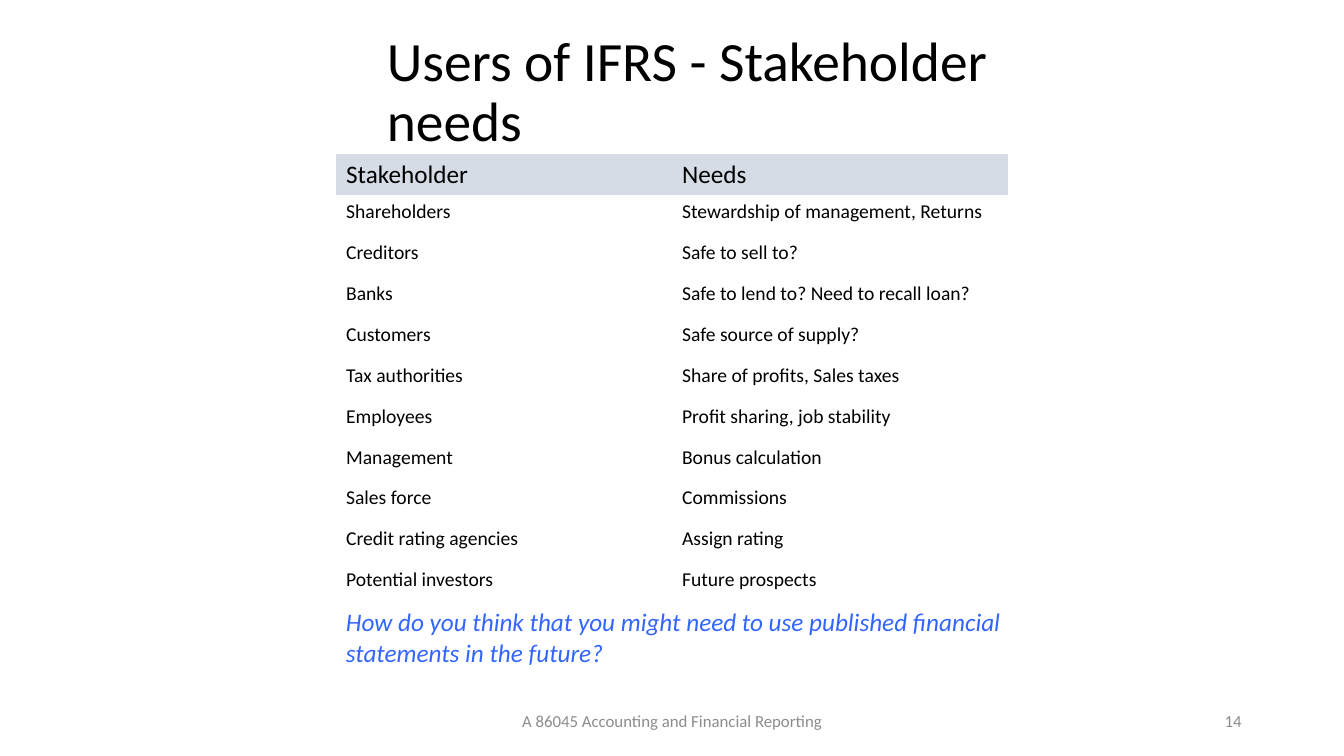
"""Build the slide on IFRS users and their stakeholder needs."""
from pptx import Presentation
from pptx.dml.color import RGBColor
from pptx.enum.text import MSO_ANCHOR, PP_ALIGN
from pptx.util import Pt

BLACK = RGBColor(0x00, 0x00, 0x00)
GREY = RGBColor(0x8C, 0x8C, 0x8C)
BLUE = RGBColor(0x33, 0x66, 0xFF)
HEADER_FILL = RGBColor(0xD6, 0xDC, 0xE5)
NO_STYLE_NO_GRID = "{2D5ABB26-0587-4C30-8999-92F81FD0307C}"

STAKEHOLDER_NEEDS = [
    ("Stakeholder", "Needs"),
    ("Shareholders", "Stewardship of management, Returns"),
    ("Creditors", "Safe to sell to?"),
    ("Banks", "Safe to lend to? Need to recall loan?"),
    ("Customers", "Safe source of supply?"),
    ("Tax authorities", "Share of profits, Sales taxes"),
    ("Employees", "Profit sharing, job stability"),
    ("Management", "Bonus calculation"),
    ("Sales force", "Commissions"),
    ("Credit rating agencies", "Assign rating"),
    ("Potential investors", "Future prospects"),
]


class SlideBuilder:
    font = "Calibri"

    def __init__(self, slide):
        self.slide = slide

    def add_run(self, tf, text, size, color=BLACK, italic=False, **para):
        p = tf.paragraphs[0]
        for name, value in para.items():
            setattr(p, name, value)
        r = p.add_run()
        r.text = text
        for name, value in {"name": self.font, "size": Pt(size), "italic": italic}.items():
            setattr(r.font, name, value)
        r.font.color.rgb = color

    def text(self, box, text, size, anchor=MSO_ANCHOR.MIDDLE, **style):
        tf = self.slide.shapes.add_textbox(*map(Pt, box)).text_frame
        for name, value in {"word_wrap": True, "vertical_anchor": anchor}.items():
            setattr(tf, name, value)
        self.add_run(tf, text, size, **style)

    def table(self, left, top, width, row_height, rows):
        frame = self.slide.shapes.add_table(
            len(rows), len(rows[0]), Pt(left), Pt(top), Pt(width), Pt(row_height * len(rows)))
        tbl = frame.table
        for name in ("first_row", "horz_banding"):
            setattr(tbl, name, False)
        frame._element.graphic.graphicData.tbl.tblPr[0].text = NO_STYLE_NO_GRID
        for i, row in enumerate(rows):
            tbl.rows[i].height = Pt(row_height)
            for j, text in enumerate(row):
                cell = tbl.cell(i, j)
                if i == 0:
                    cell.fill.solid()
                    cell.fill.fore_color.rgb = HEADER_FILL
                else:
                    cell.fill.background()
                self.add_run(cell.text_frame, text, 14 if i else 18)


def main():
    prs = Presentation()
    prs.slide_width, prs.slide_height = Pt(960), Pt(540)
    s = SlideBuilder(prs.slides.add_slide(prs.slide_layouts[6]))
    s.text((269.3, 21.6, 535, 90), "Users of IFRS - Stakeholder needs", 39.6, line_spacing=0.9)
    s.text((318.2, 500.4, 324, 28.8), "A 86045 Accounting and Financial Reporting", 12,
           color=GREY, alignment=PP_ALIGN.CENTER)
    s.table(240, 110.2, 480, 29.2, STAKEHOLDER_NEEDS)
    s.text((240, 429.8, 543, 51),
           "How do you think that you might need to use published financial"
           " statements in the future?",
           18, anchor=MSO_ANCHOR.TOP, color=BLUE, italic=True)
    s.text((678, 500.4, 216, 28.8), "14", 12, color=GREY, alignment=PP_ALIGN.RIGHT)
    prs.save("out.pptx")


if __name__ == "__main__":
    main()
